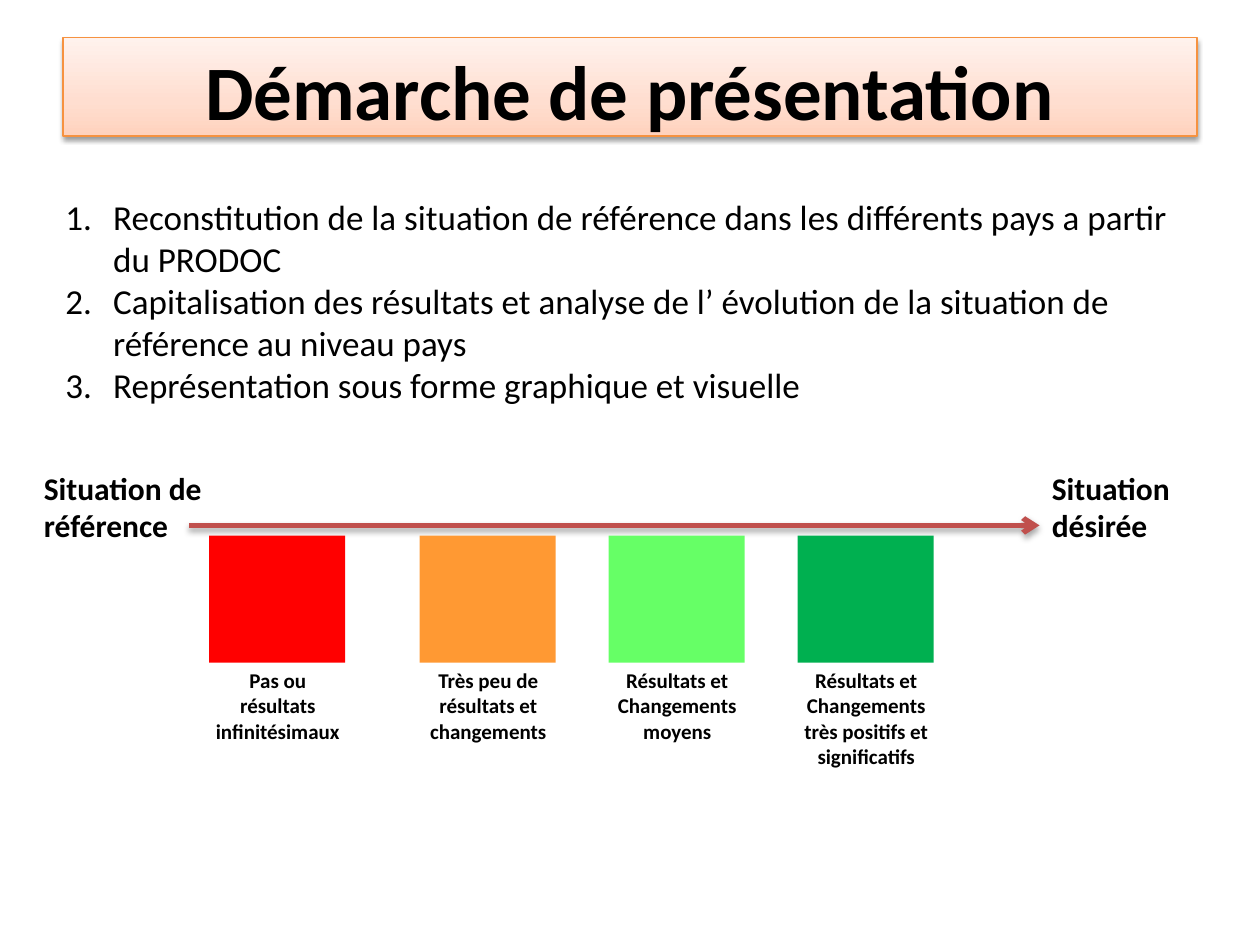
"""Build the slide that presents the approach and its four-step result scale."""
import copy
import lxml.etree
import pptx
import pptx.dml.color
import pptx.enum.dml
import pptx.enum.shapes
import pptx.enum.text
import pptx.oxml
import pptx.oxml.ns
import pptx.util

Inches, Pt = pptx.util.Inches, pptx.util.Pt
RGB = pptx.dml.color.RGBColor.from_string
qn = pptx.oxml.ns.qn
Align = pptx.enum.text.PP_ALIGN
Kind = pptx.enum.shapes.MSO_SHAPE

theme = {
    "font": "Calibri",
    "ink": RGB("000000"),
    "edge": RGB("F69240"),
    "arrow": RGB("C0504D"),
    "fade": [(0, "FFD2BD"), (0.35, "FFDED0"), (1, "FFF2ED")],
    "title": Pt(44),
    "body": Pt(20),
    "label": Pt(18),
    "note": Pt(12),
}


def write(shape, lines, size, bold=True, align=Align.LEFT, indent=0, number=False):
    """Fill a shape with styled paragraphs."""
    frame = shape.text_frame
    frame.word_wrap = True
    frame.vertical_anchor = pptx.enum.text.MSO_ANCHOR.TOP
    frame.text = "\n".join(lines)
    for para in frame.paragraphs:
        para.alignment = align
        para.font.name = theme["font"]
        para.font.size = size
        para.font.bold = bold
        para.font.color.rgb = theme["ink"]
        props = para._p.get_or_add_pPr()
        if indent:
            props.set("marL", str(Inches(indent)))
            props.set("indent", str(-Inches(indent)))
        if number:
            mark = lxml.etree.Element(qn("a:buAutoNum"), type="arabicPeriod")
            props.insert_element_before(mark, "a:tabLst", "a:defRPr", "a:extLst")


def shade(shape, alpha, gap):
    """Give a shape or connector a soft shadow below it."""
    effects = lxml.etree.SubElement(shape._element.spPr, qn("a:effectLst"))
    outer = lxml.etree.SubElement(
        effects, qn("a:outerShdw"), blurRad=str(Pt(3.1)), dist=str(Pt(gap)),
        dir="5400000", rotWithShape="0")
    color = lxml.etree.SubElement(outer, qn("a:srgbClr"), val="000000")
    lxml.etree.SubElement(color, qn("a:alpha"), val=str(alpha * 1000))


deck = pptx.Presentation()
deck.slide_width, deck.slide_height = Inches(10), Inches(7.5)
shapes = deck.slides.add_slide(deck.slide_layouts[6]).shapes

title = shapes.add_shape(Kind.RECTANGLE, Inches(0.5), Inches(0.3), Inches(9), Inches(0.78))
title.fill.gradient()
title.fill.gradient_angle = 90
stops = title.fill._fill._gradFill.gsLst
stops.insert(1, copy.deepcopy(stops[0]))
for stop, (place, color) in zip(title.fill.gradient_stops, theme["fade"]):
    stop.position = place
    stop.color.rgb = RGB(color)
title.line.color.rgb = theme["edge"]
title.line.width = Pt(0.75)
shade(title, 38, 1.6)
write(title, ["Démarche de présentation"], theme["title"], align=Align.CENTER, indent=0.56)

steps = shapes.add_textbox(Inches(0.42), Inches(1.5), Inches(9.17), Inches(1.78))
write(steps, [
    "Reconstitution de la situation de référence dans les différents pays a partir du PRODOC",
    "Capitalisation des résultats et analyse de l’ évolution de la situation de référence au niveau pays",
    "Représentation sous forme graphique et visuelle",
], theme["body"], bold=False, indent=0.38, number=True)

arrow = shapes.add_connector(
    pptx.enum.shapes.MSO_CONNECTOR.STRAIGHT,
    Inches(1.5), Inches(4.17), Inches(8.25), Inches(4.17))
arrow.line.color.rgb = theme["arrow"]
arrow.line.width = Pt(3)
lxml.etree.SubElement(arrow.line._get_or_add_ln(), qn("a:tailEnd"), type="arrow")
shade(arrow, 35, 1.8)

for left, words in [(0.25, "Situation de référence"), (8.25, "Situation désirée")]:
    label = shapes.add_textbox(Inches(left), Inches(3.67), Inches(1.5), Inches(0.71))
    write(label, [words], theme["label"])

scale = [
    (1.58, 0.71, "FF0000", "Pas ou résultats infinitésimaux"),
    (3.25, 0.71, "FF9933", "Très peu de résultats et changements"),
    (4.75, 0.71, "66FF66", "Résultats et Changements moyens"),
    (6.25, 0.91, "00B050", "Résultats et Changements très positifs et significatifs"),
]
for left, height, color, words in scale:
    box = shapes.add_shape(
        Kind.RECTANGLE, Inches(left + 0.08), Inches(4.25), Inches(1.08), Inches(1.01))
    box.shadow.inherit = False
    box.fill.solid()
    box.fill.fore_color.rgb = RGB(color)
    box.line.fill.background()
    note = shapes.add_textbox(Inches(left), Inches(5.25), Inches(1.25), Inches(height))
    write(note, [words], theme["note"], align=Align.CENTER)

deck.save("out.pptx")
